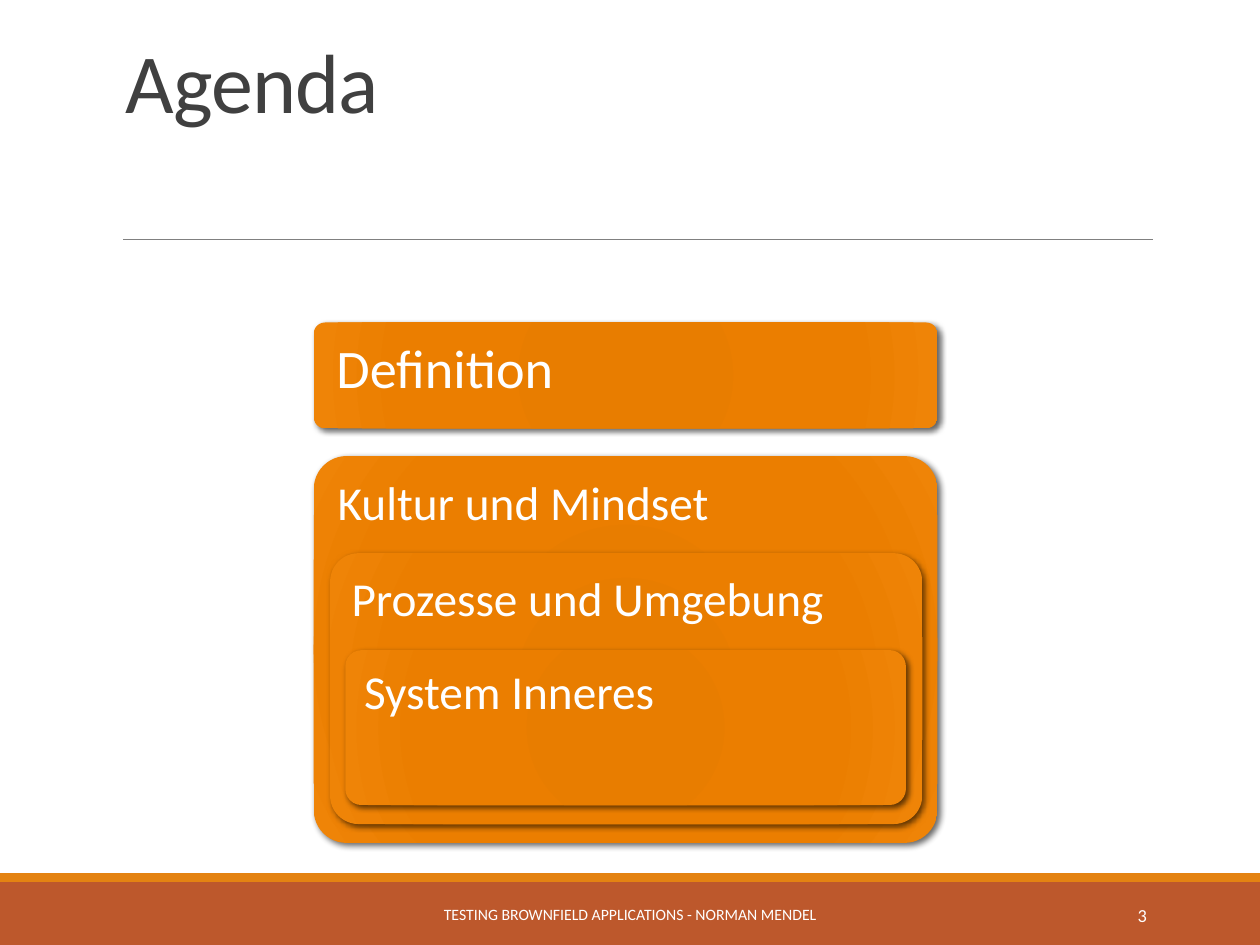
from dataclasses import dataclass

from lxml import etree
from pptx import Presentation
from pptx.dml.color import RGBColor
from pptx.enum.shapes import MSO_CONNECTOR, MSO_SHAPE
from pptx.enum.text import MSO_ANCHOR, PP_ALIGN
from pptx.oxml import parse_xml
from pptx.oxml.ns import qn
from pptx.util import Inches, Pt

RECT, ROUND = MSO_SHAPE.RECTANGLE, MSO_SHAPE.ROUNDED_RECTANGLE
LEFT, MID, RIGHT = PP_ALIGN.LEFT, PP_ALIGN.CENTER, PP_ALIGN.RIGHT
TOP, CENTER = MSO_ANCHOR.TOP, MSO_ANCHOR.MIDDLE
FONT, WHITE = "Calibri", "FFFFFF"
SPACE = 'xmlns:a="http://schemas.openxmlformats.org/drawingml/2006/main"'
STOPS = [(0, "E57B00"), (34, "E87D00"), (70, "EB7E00"), (100, "EF8407")]


@dataclass
class Box:
    x: float
    y: float
    w: float
    h: float


@dataclass
class Panel:
    text: str
    box: Box
    round: float
    pad: tuple[float, float]
    inset: float = 0.11
    size: float = 27


PANELS = [
    Panel("Kultur und Mindset", Box(2.49, 3.62, 4.95, 3.07), 0.085, (0.08, 0.08)),
    Panel("Prozesse und Umgebung", Box(2.62, 4.39, 4.7, 2.15), 0.105, (0.06, 0.07)),
    Panel("System Inneres", Box(2.74, 5.16, 4.45, 1.23), 0.105, (0.04, 0.04)),
    Panel("Definition", Box(2.49, 2.56, 4.95, 0.84), 0.105, (0.05, 0.02), 0.13, 31),
]


def color(code: str) -> RGBColor:
    return RGBColor.from_string(code)


def place(box: Box) -> tuple:
    return tuple(Inches(v) for v in (box.x, box.y, box.w, box.h))


def add_text(slide, text: str, box: Box, size: float, code: str = WHITE,
             align=LEFT, anchor=TOP, line: float = 1.0, inset=None):
    frame = slide.shapes.add_textbox(*place(box)).text_frame
    frame.word_wrap = True
    frame.vertical_anchor = anchor
    if inset is not None:
        frame.margin_left = frame.margin_right = Inches(inset)
        frame.margin_top = frame.margin_bottom = Inches(inset)
    para = frame.paragraphs[0]
    para.alignment = align
    para.line_spacing = line
    run = para.add_run()
    run.text = text
    run.font.name = FONT
    run.font.size = Pt(size)
    run.font.color.rgb = color(code)
    return run


def add_bar(slide, box: Box, code: str) -> None:
    bar = slide.shapes.add_shape(RECT, *place(box))
    bar.shadow.inherit = False
    bar.fill.solid()
    bar.fill.fore_color.rgb = color(code)
    bar.line.fill.background()


def add_rule(slide, left: float, right: float, y: float) -> None:
    rule = slide.shapes.add_connector(
        MSO_CONNECTOR.STRAIGHT, Inches(left), Inches(y), Inches(right), Inches(y))
    rule.line.color.rgb = color("808080")
    rule.line.width = Pt(0.5)
    etree.SubElement(rule._element.spPr, qn("a:effectLst"))


def add_panel(slide, panel: Panel) -> None:
    box = panel.box
    shape = slide.shapes.add_shape(ROUND, *place(box))
    shape.adjustments[0] = panel.round
    shape.line.fill.background()
    shape.shadow.inherit = False

    # Radial gradient and soft shadow
    stops = "".join(f'<a:gs pos="{pos * 1000}"><a:srgbClr val="{code}"/></a:gs>'
                    for pos, code in STOPS)
    props = shape._element.spPr
    props.find(qn("a:prstGeom")).addnext(parse_xml(
        f'<a:gradFill {SPACE} rotWithShape="1"><a:gsLst>{stops}</a:gsLst>'
        '<a:path path="circle"><a:fillToRect l="100000" t="100000" '
        'r="100000" b="100000"/></a:path></a:gradFill>'))
    props.find(qn("a:effectLst")).append(parse_xml(
        f'<a:outerShdw {SPACE} blurRad="{Pt(3.5)}" dist="{Pt(2)}" dir="2700000" '
        'rotWithShape="0"><a:srgbClr val="000000"><a:alpha val="60000"/>'
        '</a:srgbClr></a:outerShdw>'))

    dx, dy = panel.pad
    inner = Box(box.x + dx, box.y + dy, box.w - 2 * dx, box.h - 2 * dy)
    add_text(slide, panel.text, inner, panel.size, line=0.9, inset=panel.inset)


def main() -> None:
    deck = Presentation()
    deck.slide_width, deck.slide_height = Inches(10), Inches(7.5)
    slide = deck.slides.add_slide(deck.slide_layouts[6])

    # Footer bars and title rule
    add_bar(slide, Box(0, 7, 10, 0.5), "BD582C")
    add_bar(slide, Box(0, 6.93, 10, 0.07), "E48312")
    add_rule(slide, 0.98, 9.15, 1.9)

    # Title and footer text
    title = add_text(slide, "Agenda", Box(0.9, 0.31, 8.25, 1.59), 48, "404040",
                     line=0.85)
    title.font._element.set("spc", "-50")
    add_text(slide, "TESTING BROWNFIELD APPLICATIONS - NORMAN MENDEL",
             Box(3.02, 7.06, 3.96, 0.4), 9, align=MID, anchor=CENTER)
    add_text(slide, "3", Box(8.12, 7.06, 1.08, 0.4), 10.5,
             align=RIGHT, anchor=CENTER)

    # Agenda panels, outer ones first
    for panel in PANELS:
        add_panel(slide, panel)

    deck.save("out.pptx")


if __name__ == "__main__":
    main()
